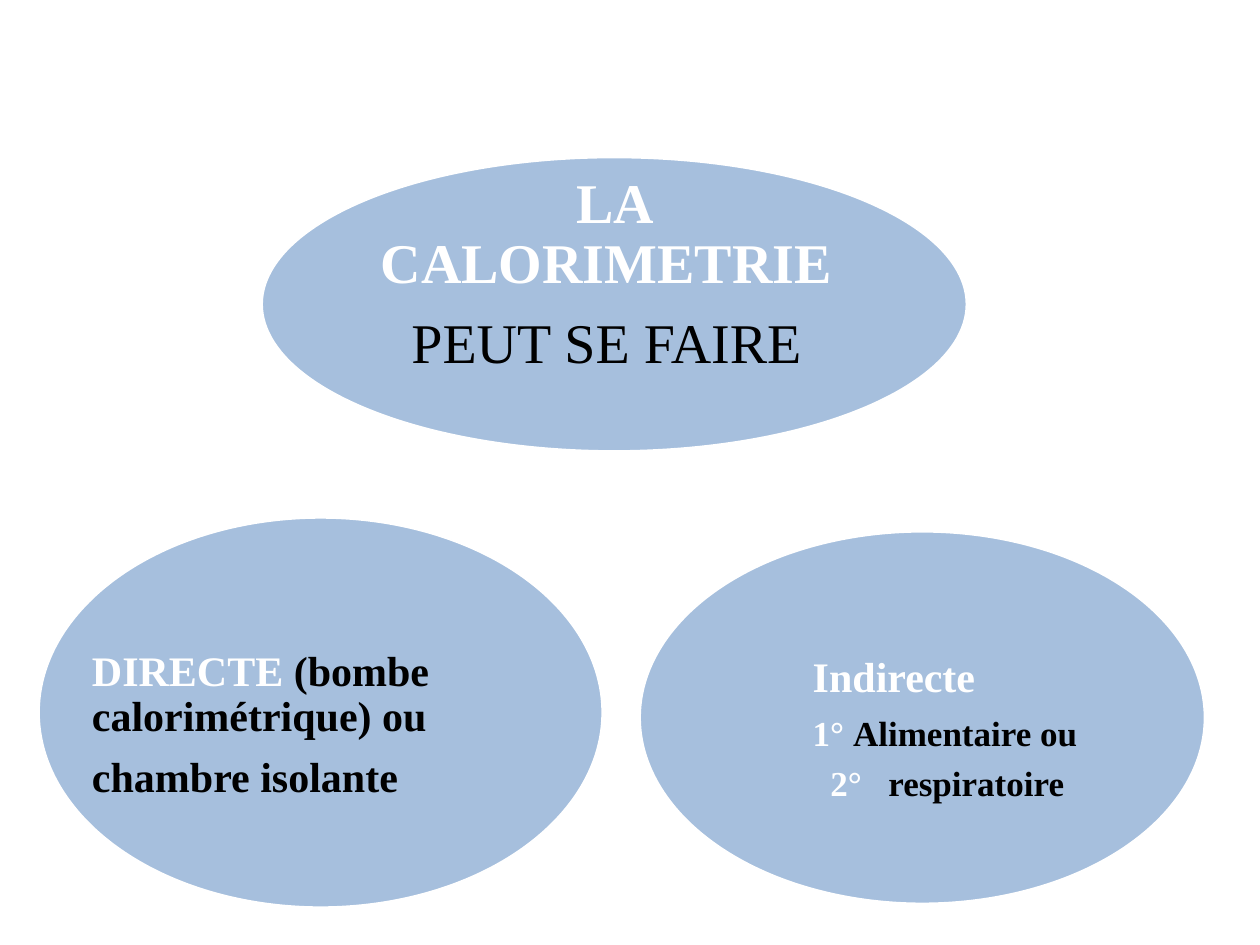
from lxml.etree import SubElement
from pptx import Presentation
from pptx.dml.color import RGBColor
from pptx.enum.shapes import MSO_SHAPE
from pptx.enum.text import MSO_ANCHOR, MSO_AUTO_SIZE, PP_ALIGN
from pptx.oxml.ns import qn
from pptx.util import Inches, Pt

BLUE = RGBColor(0x4F, 0x81, 0xBD)
WHITE = RGBColor(0xFF, 0xFF, 0xFF)
BLACK = RGBColor(0, 0, 0)
FONT = "Times New Roman"
TITLE_ONLY = 5
SPACE_AFTER = 0.35  # share of the text size
HANGING = (0.6, -0.46)  # left margin and first-line indent, inches

# Each paragraph: size, bold, indent, runs of (text, colour)
BUBBLES = [
    {"ellipse": (2.08, 1.25, 5.59, 2.33), "text": (2.82, 1.66, 4.1, 1.05),
     "align": PP_ALIGN.CENTER, "is_title": True,
     "paragraphs": [
         (32, True, None, [("LA CALORIMETRIE ", WHITE)]),
         (32, False, None, [("PEUT SE FAIRE ", BLACK)])]},
    {"ellipse": (5.08, 4.22, 4.48, 2.95), "text": (6.45, 4.98, 2.69, 1.63),
     "align": PP_ALIGN.LEFT, "is_title": False,
     "paragraphs": [
         (24, True, None, [("Indirecte", WHITE)]),
         (20, True, None, [("1° ", WHITE), ("Alimentaire ou", BLACK)]),
         (20, True, HANGING, [("2°\t", WHITE), ("respiratoire", BLACK)])]},
    {"ellipse": (0.31, 4.11, 4.47, 3.09), "text": (0.73, 4.91, 2.68, 1.7),
     "align": PP_ALIGN.LEFT, "is_title": False,
     "paragraphs": [
         (24, True, None, [("DIRECTE", WHITE),
                           (" (bombe calorimétrique) ou", BLACK)]),
         (24, True, None, [("chambre isolante", BLACK)])]},
]


def add_ellipse(page, place):
    ellipse = page.shapes.add_shape(MSO_SHAPE.OVAL, *map(Inches, place))
    ellipse.shadow.inherit = False
    ellipse.fill.solid()
    ellipse.fill.fore_color.rgb = BLUE
    colour = ellipse.fill._xPr.find(qn("a:solidFill"))[0]
    SubElement(colour, qn("a:alpha"), val="50000")
    ellipse.line.color.rgb = WHITE
    ellipse.line.width = Pt(1)


def place_text(box, bubble):
    box.left, box.top, box.width, box.height = map(Inches, bubble["text"])
    frame = box.text_frame
    frame.auto_size = MSO_AUTO_SIZE.NONE
    frame.word_wrap = True
    frame.vertical_anchor = MSO_ANCHOR.MIDDLE
    frame.margin_left = frame.margin_right = 0
    frame.margin_top = frame.margin_bottom = 0
    for index, (size, bold, indent, runs) in enumerate(bubble["paragraphs"]):
        para = frame.add_paragraph() if index else frame.paragraphs[0]
        para.alignment = bubble["align"]
        para.line_spacing = 0.9
        para.space_before = Pt(0)
        para.space_after = Pt(size * SPACE_AFTER)
        if indent:
            properties = para._p.get_or_add_pPr()
            properties.set("marL", str(Inches(indent[0])))
            properties.set("indent", str(Inches(indent[1])))
        for text, colour in runs:
            span = para.add_run()
            span.text = text
            span.font.name = FONT
            span.font.size = Pt(size)
            span.font.bold = bold
            span.font.color.rgb = colour


def main():
    deck = Presentation()
    deck.slide_width, deck.slide_height = Inches(10), Inches(7.5)
    page = deck.slides.add_slide(deck.slide_layouts[TITLE_ONLY])
    for bubble in BUBBLES:
        add_ellipse(page, bubble["ellipse"])
        if bubble["is_title"]:
            box = page.shapes.title
            page.shapes._spTree.append(box._element)  # bring above its ellipse
        else:
            box = page.shapes.add_textbox(*map(Inches, bubble["text"]))
        place_text(box, bubble)
    deck.save("out.pptx")


if __name__ == "__main__":
    main()
